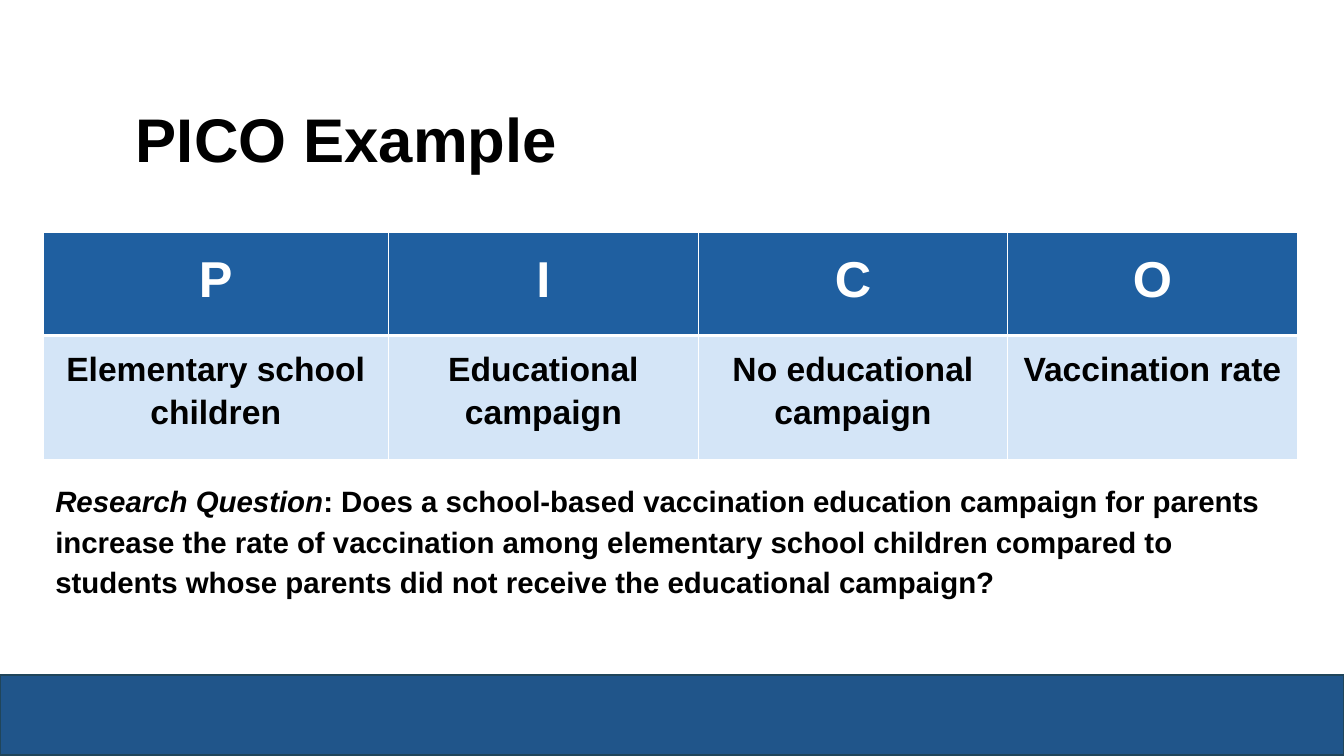
"""Build the PICO example slide."""
from dataclasses import dataclass

from lxml.etree import SubElement
from pptx import Presentation
from pptx.dml.color import RGBColor
from pptx.enum.shapes import MSO_SHAPE
from pptx.enum.text import MSO_ANCHOR, PP_ALIGN
from pptx.oxml.ns import qn
from pptx.util import Inches, Pt

BLACK = RGBColor(0x00, 0x00, 0x00)
WHITE = RGBColor(0xFF, 0xFF, 0xFF)
HEAD = RGBColor(0x1F, 0x5F, 0xA0)
PALE = RGBColor(0xD4, 0xE5, 0xF7)
BAND = RGBColor(0x20, 0x55, 0x8A)
EDGE = RGBColor(0x20, 0x45, 0x5A)
PAD = Inches(0.1)


@dataclass(frozen=True)
class Row:
    words: tuple[str, ...]
    height: float
    size: int
    ink: RGBColor
    fill: RGBColor
    top: int


WIDTHS = (3.42, 3.08, 3.06, 2.88)
ROWS = (
    Row(("P", "I", "C", "O"), 1.02, 36, WHITE, HEAD, 1),
    Row(("Elementary school children", "Educational campaign",
         "No educational campaign", "Vaccination rate"),
        1.24, 24, BLACK, PALE, 3),
)


def style(para, size: int, ink: RGBColor, space: float) -> None:
    para.line_spacing = space
    font = para.font
    font.name, font.size, font.bold = "Arial", Pt(size), True
    font.color.rgb = ink


def pad(box) -> None:
    box.margin_left = box.margin_right = PAD
    box.margin_top = box.margin_bottom = PAD


def add_text(slide, left: float, top: float, width: float, height: float):
    box = slide.shapes.add_textbox(
        Inches(left), Inches(top), Inches(width), Inches(height))
    box.text_frame.word_wrap = True
    return box.text_frame


def add_edge(cell, side: str, width: int) -> None:
    line = SubElement(cell._tc.get_or_add_tcPr(), qn(f"a:ln{side}"),
                      w=str(Pt(width)))
    fill = SubElement(line, qn("a:solidFill"))
    SubElement(fill, qn("a:srgbClr"), val=str(WHITE))


def fill_cell(cell, word: str, row: Row) -> None:
    pad(cell)
    cell.text = word
    para = cell.text_frame.paragraphs[0]
    para.alignment = PP_ALIGN.CENTER
    style(para, row.size, row.ink, 1.15)
    for side, width in (("L", 1), ("R", 1), ("T", row.top), ("B", 3)):
        add_edge(cell, side, width)
    cell.fill.solid()
    cell.fill.fore_color.rgb = row.fill


def add_grid(slide) -> None:
    table = slide.shapes.add_table(
        len(ROWS), len(WIDTHS), Inches(0.43), Inches(2.31),
        Inches(sum(WIDTHS)), Inches(sum(row.height for row in ROWS))).table
    for col, width in zip(table.columns, WIDTHS):
        col.width = Inches(width)
    for r, row in enumerate(ROWS):
        table.rows[r].height = Inches(row.height)
        for c, word in enumerate(row.words):
            fill_cell(table.cell(r, c), word, row)


def add_band(slide) -> None:
    band = slide.shapes.add_shape(
        MSO_SHAPE.RECTANGLE, 0, Inches(6.7), Inches(13.33), Inches(0.79))
    band.shadow.inherit = False
    band.fill.solid()
    band.fill.fore_color.rgb = BAND
    band.line.color.rgb = EDGE
    band.line.width = Pt(1.5)


def add_title(slide) -> None:
    frame = add_text(slide, 1.25, 0.67, 10.8, 1.48)
    frame.vertical_anchor = MSO_ANCHOR.MIDDLE
    frame.text = "PICO Example"
    style(frame.paragraphs[0], 44, BLACK, 0.9)


def add_query(slide) -> None:
    frame = add_text(slide, 0.45, 4.64, 12.43, 1.48)
    pad(frame)
    para = frame.paragraphs[0]
    style(para, 21, BLACK, 1.15)
    lead = para.add_run()
    lead.text = "Research Question"
    lead.font.italic = True
    para.add_run().text = (
        ": Does a school-based vaccination education campaign for parents "
        "increase the rate of vaccination among elementary school children "
        "compared to students whose parents did not receive the educational "
        "campaign?")


def main() -> None:
    deck = Presentation()
    deck.slide_width, deck.slide_height = Inches(13.33), Inches(7.5)
    slide = deck.slides.add_slide(deck.slide_layouts[6])
    add_band(slide)
    add_title(slide)
    add_grid(slide)
    add_query(slide)
    deck.save("out.pptx")


if __name__ == "__main__":
    main()
